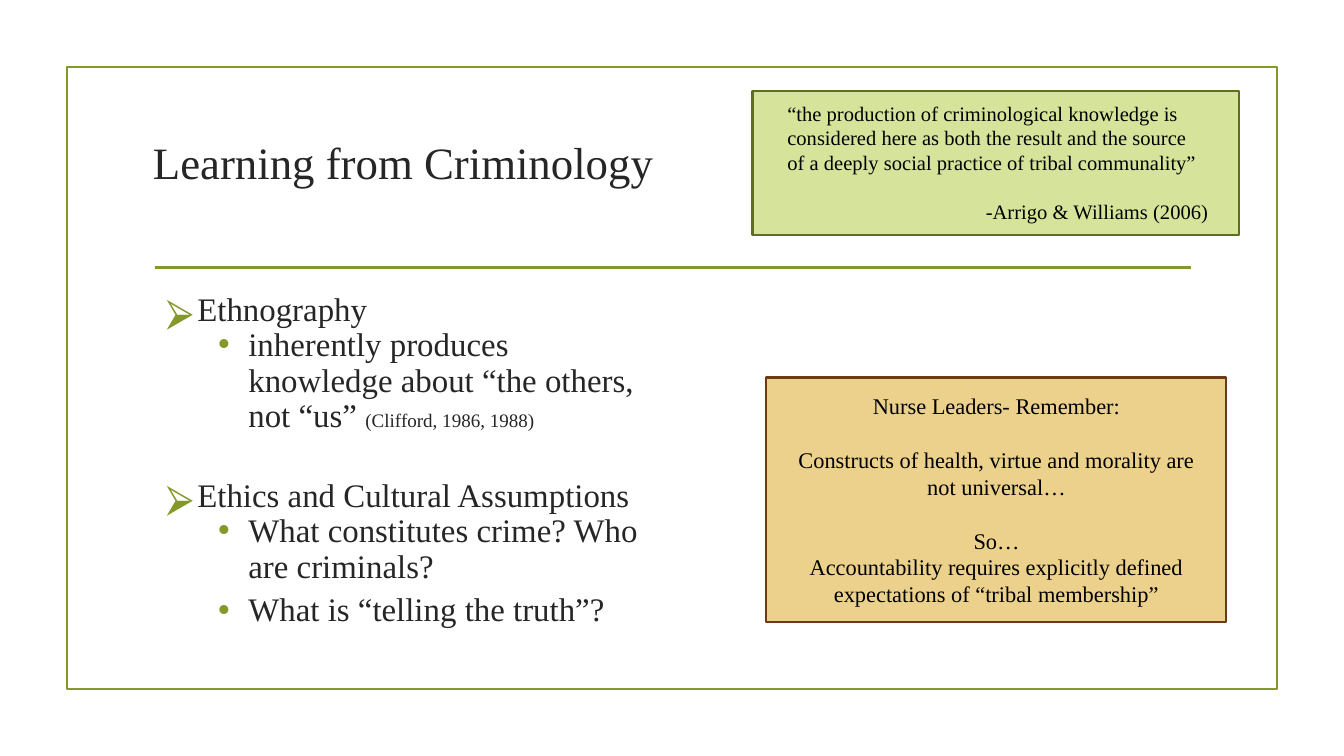
import lxml.etree
import pptx
import pptx.dml.color
import pptx.enum.shapes
import pptx.enum.text
import pptx.oxml.ns
import pptx.util

Inches = pptx.util.Inches
Pt = pptx.util.Pt
RGBColor = pptx.dml.color.RGBColor
ALIGN = pptx.enum.text.PP_ALIGN

FONT = "Times New Roman"
SYMBOL_FONT = "Noto Sans Symbols"
GREEN = RGBColor(0x83, 0x99, 0x2A)
DARK_GREEN = RGBColor(0x5F, 0x6F, 0x1E)
LIGHT_GREEN = RGBColor(0xD5, 0xE4, 0x9A)
BROWN = RGBColor(0x6D, 0x3B, 0x13)
SAND = RGBColor(0xEB, 0xD1, 0x8B)
CHARCOAL = RGBColor(0x26, 0x26, 0x26)
BLACK = RGBColor(0, 0, 0)

BODY_SIZE = 17.6
CITATION_SIZE = 10.2
# Bullet character, its font and left indent in inches for each outline level
LEVELS = [("⮚", SYMBOL_FONT, 0.23), ("•", FONT, 0.61)]

# Level, space before in points, text, citation
OUTLINE = [
    (0, 0, "Ethnography", ""),
    (1, 0, "inherently produces knowledge about “the others, not “us” ",
     "(Clifford, 1986, 1988)"),
    (0, 23.5, "Ethics and Cultural Assumptions", ""),
    (1, 0, "What constitutes crime? Who are criminals?", ""),
    (1, 4.5, "What is “telling the truth”?", ""),
]

# Text, alignment, space before in points
REMINDER = [
    ("Nurse Leaders- Remember:", ALIGN.CENTER, 0),
    ("Constructs of health, virtue and morality are not universal…",
     ALIGN.CENTER, 14.4),
    ("So…", ALIGN.CENTER, 14.4),
    ("Accountability requires explicitly defined expectations of "
     "“tribal membership”", ALIGN.CENTER, 0),
]
QUOTE = [
    ("“the production of criminological knowledge is considered here as both "
     "the result and the source of a deeply social practice of tribal "
     "communality”", ALIGN.LEFT, 0),
    ("-Arrigo & Williams (2006)", ALIGN.RIGHT, 13.2),
]


def apply_format(target, values):
    for name, value in values.items():
        setattr(target, name, value)


def add_rectangle(slide, box, line_color, fill_color=None):
    shape = slide.shapes.add_shape(
        pptx.enum.shapes.MSO_SHAPE.RECTANGLE, *map(Inches, box))
    shape.shadow.inherit = False
    if fill_color is None:
        shape.fill.background()
    else:
        shape.fill.solid()
        shape.fill.fore_color.rgb = fill_color
    shape.line.color.rgb = line_color
    shape.line.width = Pt(1.25)


def add_divider(slide, left, right, top):
    line = slide.shapes.add_connector(
        pptx.enum.shapes.MSO_CONNECTOR.STRAIGHT,
        Inches(left), Inches(top), Inches(right), Inches(top))
    line.line.color.rgb = GREEN
    line.line.width = Pt(1.25)
    lxml.etree.SubElement(line._element.spPr, pptx.oxml.ns.qn("a:effectLst"))


def add_text_frame(slide, box, vertical_margin=0.05):
    text_frame = slide.shapes.add_textbox(*map(Inches, box)).text_frame
    apply_format(text_frame, {
        "word_wrap": True,
        "vertical_anchor": pptx.enum.text.MSO_ANCHOR.TOP,
        "margin_left": Inches(0.1),
        "margin_right": Inches(0.1),
        "margin_top": Inches(vertical_margin),
        "margin_bottom": Inches(vertical_margin),
    })
    return text_frame


def next_paragraph(text_frame, index):
    return text_frame.add_paragraph() if index else text_frame.paragraphs[0]


def add_run(paragraph, text, size, color):
    run = paragraph.add_run()
    run.text = text
    apply_format(run.font, {"name": FONT, "size": Pt(size)})
    run.font.color.rgb = color


def add_bullet(paragraph, character, font_name, indent):
    """Give the paragraph a green bullet on a hanging indent."""
    properties = paragraph._p.get_or_add_pPr()
    properties.set("marL", str(Inches(indent)))
    properties.set("indent", str(Inches(-0.23)))
    qn = pptx.oxml.ns.qn
    color = lxml.etree.SubElement(properties, qn("a:buClr"))
    lxml.etree.SubElement(color, qn("a:srgbClr"), val=str(GREEN))
    lxml.etree.SubElement(properties, qn("a:buSzPct"), val="115000")
    lxml.etree.SubElement(properties, qn("a:buFont"), typeface=font_name)
    lxml.etree.SubElement(properties, qn("a:buChar"), char=character)


def add_title(slide, text):
    text_frame = add_text_frame(slide, (1.04, 0.9, 7.87, 1.07), 0.1)
    add_run(text_frame.paragraphs[0], text, 24, CHARCOAL)


def add_outline(slide, box, items):
    text_frame = add_text_frame(slide, box)
    for index, (level, space, text, citation) in enumerate(items):
        paragraph = next_paragraph(text_frame, index)
        add_bullet(paragraph, *LEVELS[level])
        apply_format(paragraph, {
            "level": level, "line_spacing": 0.9, "space_before": Pt(space)})
        add_run(paragraph, text, BODY_SIZE, CHARCOAL)
        if citation:
            add_run(paragraph, citation, CITATION_SIZE, CHARCOAL)


def add_note(slide, box, items, size):
    text_frame = add_text_frame(slide, box)
    for index, (text, alignment, space) in enumerate(items):
        paragraph = next_paragraph(text_frame, index)
        apply_format(paragraph, {
            "alignment": alignment, "space_before": Pt(space)})
        add_run(paragraph, text, size, BLACK)


def main():
    presentation = pptx.Presentation()
    presentation.slide_width = Inches(10)
    presentation.slide_height = Inches(10 * 9 / 16)
    slide = presentation.slides.add_slide(presentation.slide_layouts[6])

    add_rectangle(slide, (0.5, 0.5, 9, 4.63), GREEN)
    add_divider(slide, 1.15, 8.86, 1.99)
    add_title(slide, "Learning from Criminology")
    add_outline(slide, (1.14, 2.13, 3.86, 2.66), OUTLINE)
    add_rectangle(slide, (5.7, 2.81, 3.42, 1.82), BROWN, SAND)
    add_note(slide, (5.76, 2.87, 3.31, 1.72), REMINDER, 12)
    add_rectangle(slide, (5.6, 0.68, 3.62, 1.07), DARK_GREEN, LIGHT_GREEN)
    add_note(slide, (5.76, 0.7, 3.33, 1.03), QUOTE, 11)

    presentation.save("out.pptx")


if __name__ == "__main__":
    main()
